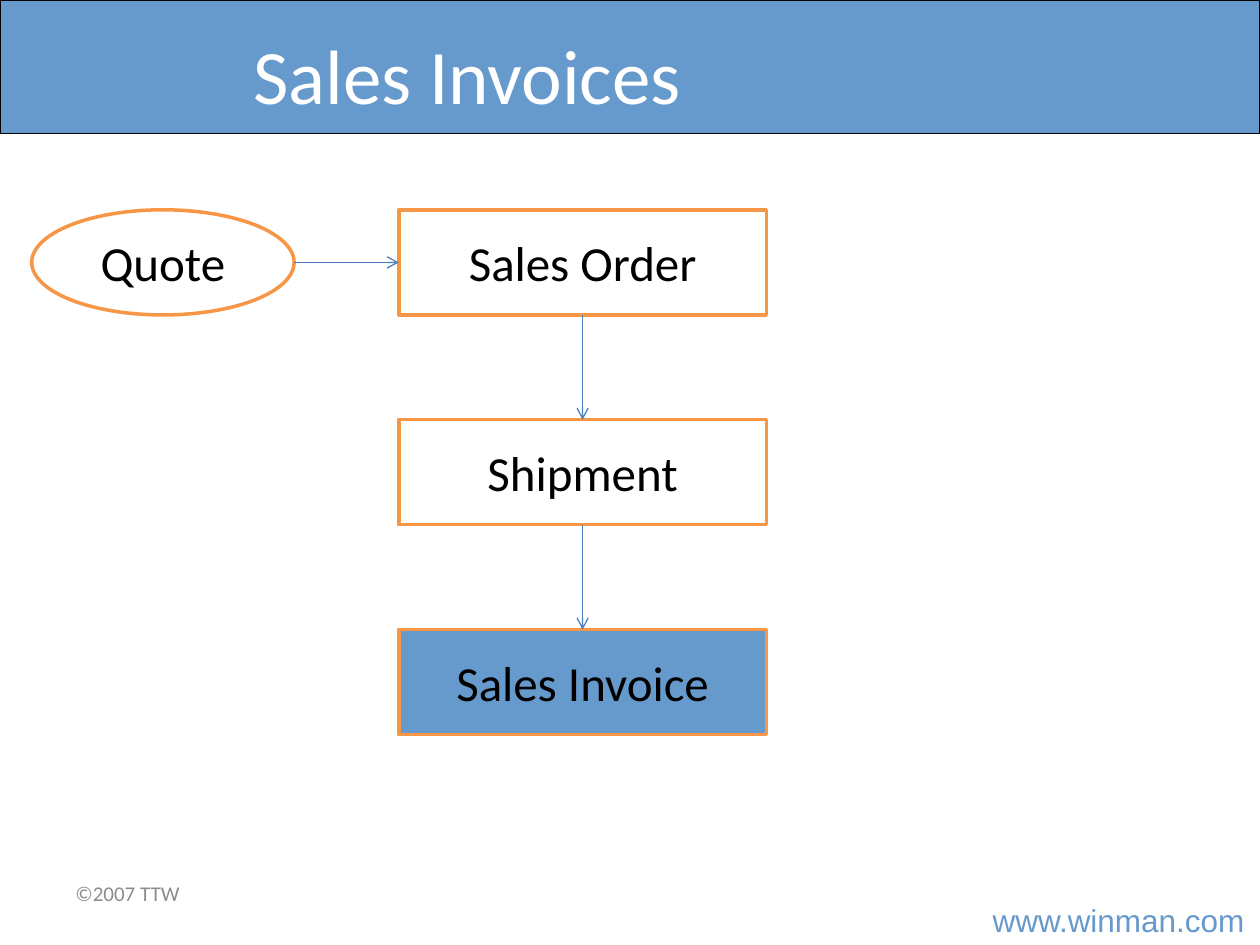
from lxml import etree
from pptx import Presentation
from pptx.dml.color import RGBColor
from pptx.enum.shapes import MSO_CONNECTOR, MSO_SHAPE
from pptx.enum.text import MSO_ANCHOR, PP_ALIGN
from pptx.oxml.ns import qn
from pptx.util import Cm, Pt

RECTANGLE, OVAL = MSO_SHAPE.RECTANGLE, MSO_SHAPE.OVAL
STRAIGHT = MSO_CONNECTOR.STRAIGHT
LEFT, CENTER = PP_ALIGN.LEFT, PP_ALIGN.CENTER
TOP, MIDDLE = MSO_ANCHOR.TOP, MSO_ANCHOR.MIDDLE

COLORS = {
    "blue": "6699CC",
    "orange": "F79646",
    "arrow": "4B7EBC",
    "grey": "8C8C8C",
    "black": "000000",
    "white": "FFFFFF",
}

# Flow grid: rows are as far apart as two node heights
NODE_HEIGHT = Cm(2.12)
FIRST_ROW, ROW_STEP = Cm(4.23), Cm(4.23)
COLUMN_LEFT, COLUMN_WIDTH = Cm(8.04), Cm(7.41)
QUOTE_LEFT, QUOTE_WIDTH = Cm(0.64), Cm(5.29)


def color(name):
    return RGBColor.from_string(COLORS[name])


def set_text(shape, text, size, color_name, font="Calibri", align=CENTER, anchor=MIDDLE, wrap=True):
    frame = shape.text_frame
    frame.text = text
    frame.word_wrap = wrap
    frame.vertical_anchor = anchor
    para = frame.paragraphs[0]
    para.alignment = align
    span = para.runs[0]
    span.font.name = font
    span.font.size = Pt(size)
    span.font.color.rgb = color(color_name)


def add_outlined(page, kind, place, line, width, fill=None):
    shape = page.shapes.add_shape(kind, *place)
    shape.shadow.inherit = False
    if fill:
        shape.fill.solid()
        shape.fill.fore_color.rgb = color(fill)
    else:
        shape.fill.background()
    shape.line.color.rgb = color(line)
    shape.line.width = Pt(width)
    return shape


def add_node(page, kind, text, left, top, width, fill=None):
    node = add_outlined(page, kind, (left, top, width, NODE_HEIGHT), "orange", 2, fill)
    set_text(node, text, 28, "black")
    return node


def add_label(page, place, text, size, color_name, **style):
    box = page.shapes.add_textbox(*place)
    set_text(box, text, size, color_name, align=LEFT, **style)


def add_arrow(page, start, end):
    arrow = page.shapes.add_connector(STRAIGHT, *start, *end)
    arrow.line.color.rgb = color("arrow")
    arrow.line.width = Pt(0.75)
    properties = arrow.element.spPr
    etree.SubElement(properties.find(qn("a:ln")), qn("a:tailEnd"), type="arrow")
    etree.SubElement(properties, qn("a:effectLst"))


def add_header(deck, page):
    banner = add_outlined(page, RECTANGLE, (0, 0, deck.slide_width, Cm(2.69)), "black", 0.75, "blue")
    title = page.shapes.title
    title.left, title.top, title.width, title.height = Cm(0), Cm(0.43), Cm(18.85), Cm(2.11)
    set_text(title, "Sales Invoices", 44, "white")
    # The banner goes behind the title
    title.element.addprevious(banner.element)


def add_flow(page):
    quote = add_node(page, OVAL, "Quote", QUOTE_LEFT, FIRST_ROW, QUOTE_WIDTH)
    steps = [("Sales Order", None), ("Shipment", None), ("Sales Invoice", "blue")]
    nodes = [
        add_node(page, RECTANGLE, text, COLUMN_LEFT, FIRST_ROW + row * ROW_STEP, COLUMN_WIDTH, fill)
        for row, (text, fill) in enumerate(steps)
    ]

    # Arrows from the quote to the order, then down the column
    middle = FIRST_ROW + NODE_HEIGHT // 2
    add_arrow(page, (quote.left + quote.width, middle), (COLUMN_LEFT, middle))
    center = COLUMN_LEFT + COLUMN_WIDTH // 2
    for upper, lower in zip(nodes, nodes[1:]):
        add_arrow(page, (center, upper.top + upper.height), (center, lower.top))


def main():
    deck = Presentation()
    deck.slide_width, deck.slide_height = Cm(25.4), Cm(19.05)
    page = deck.slides.add_slide(deck.slide_layouts[5])

    add_header(deck, page)
    add_flow(page)

    # Footer
    add_label(page, (Cm(1.27), Cm(17.35), Cm(5.92), Cm(1.32)), "©2007 TTW", 12, "grey")
    add_label(page, (Cm(19.76), Cm(18.03), Cm(5.64), Cm(1.02)), "www.winman.com", 18, "blue",
              font="Arial", anchor=TOP, wrap=False)

    deck.save("out.pptx")


if __name__ == "__main__":
    main()
